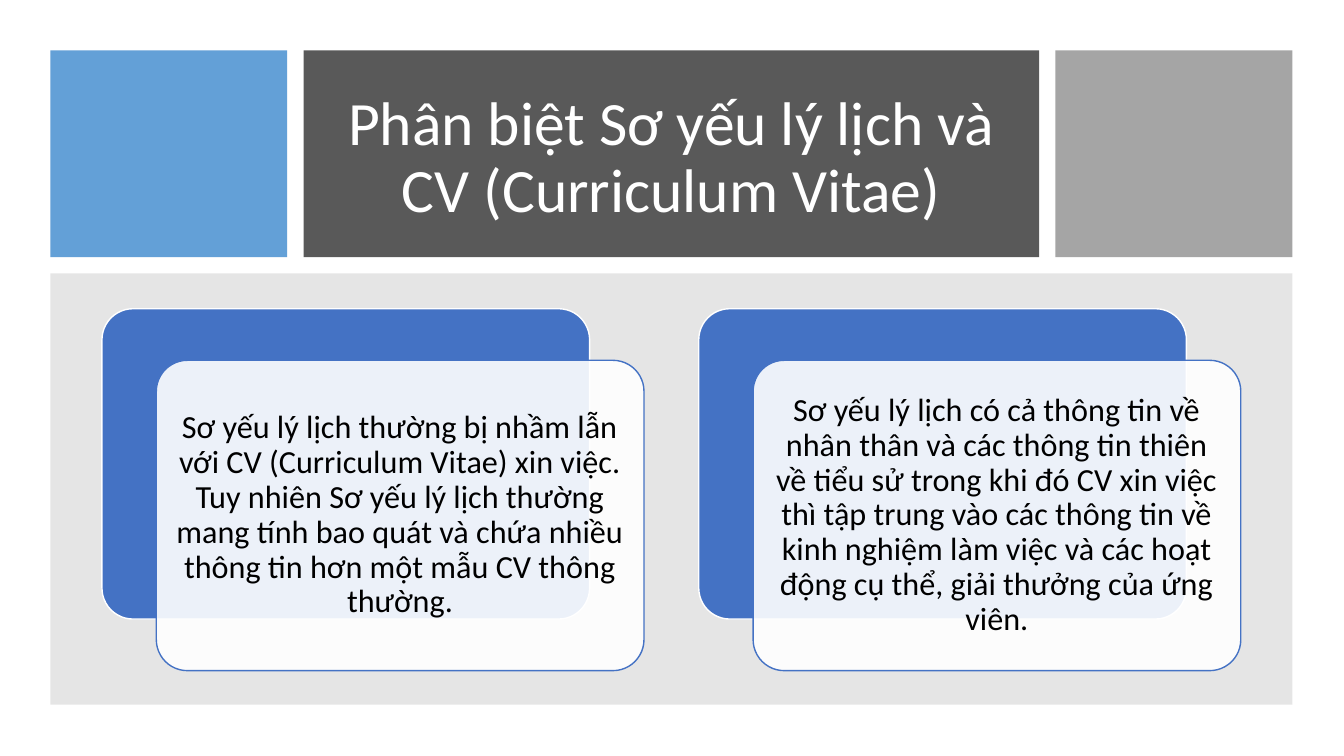
from dataclasses import dataclass

from lxml.etree import SubElement
from pptx import Presentation
from pptx.dml.color import RGBColor
from pptx.enum.shapes import MSO_SHAPE as Preset
from pptx.enum.text import MSO_ANCHOR as Anchor, PP_ALIGN as Align
from pptx.oxml.ns import qn
from pptx.util import Cm, Pt


@dataclass(frozen=True)
class Theme:
    font: str = "Calibri"
    title_size: int = 44
    body_size: int = 23
    line_spacing: float = 0.9
    outline: int = 1
    white: str = "FFFFFF"
    black: str = "000000"
    left_block: str = "5B9BD5"
    title_block: str = "595959"
    right_block: str = "A5A5A5"
    panel: str = "808080"
    card: str = "4472C4"


@dataclass(frozen=True)
class Box:
    """A rectangle measured in centimetres."""
    left: float
    top: float
    width: float
    height: float

    def lengths(self):
        return Cm(self.left), Cm(self.top), Cm(self.width), Cm(self.height)


THEME = Theme()
MARGIN = 1.27
GAP = 0.41
HEADER = Box(MARGIN, MARGIN, 31.3, 5.21)
PANEL = Box(MARGIN, HEADER.top + HEADER.height + GAP, HEADER.width, 10.87)

TITLE = "Phân biệt Sơ yếu lý lịch và CV (Curriculum Vitae)"
CARD_TEXTS = [
    "Sơ yếu lý lịch thường bị nhầm lẫn với CV (Curriculum Vitae) xin việc. "
    "Tuy nhiên Sơ yếu lý lịch thường mang tính bao quát và chứa nhiều thông "
    "tin hơn một mẫu CV thông thường.",
    "Sơ yếu lý lịch có cả thông tin về nhân thân và các thông tin thiên về "
    "tiểu sử trong khi đó CV xin việc thì tập trung vào các thông tin về kinh "
    "nghiệm làm việc và các hoạt động cụ thể, giải thưởng của ứng viên.",
]


def add_block(slide, preset, box, color, opacity=100, outline=None):
    shape = slide.shapes.add_shape(preset, *box.lengths())
    shape.shadow.inherit = False
    shape.fill.solid()
    shape.fill.fore_color.rgb = RGBColor.from_string(color)
    if opacity < 100:
        fill_color = shape.fill._xPr.find(qn("a:solidFill"))[0]
        SubElement(fill_color, qn("a:alpha"), val=str(opacity * 1000))
    if outline:
        shape.line.color.rgb = RGBColor.from_string(outline)
        shape.line.width = Pt(THEME.outline)
    else:
        shape.line.fill.background()
    return shape


def write_centred(shape, text, size, color):
    frame = shape.text_frame
    frame.word_wrap = True
    frame.vertical_anchor = Anchor.MIDDLE
    frame.margin_left = frame.margin_right = Cm(0.25)
    frame.margin_top = frame.margin_bottom = Cm(0.25)
    paragraph = frame.paragraphs[0]
    paragraph.alignment = Align.CENTER
    paragraph.line_spacing = THEME.line_spacing
    run = paragraph.add_run()
    run.text = text
    run.font.name = THEME.font
    run.font.size = Pt(size)
    run.font.color.rgb = RGBColor.from_string(color)


def add_header(slide, box, title):
    """Place the title block between two coloured side blocks."""
    side = 5.97
    middle = box.width - 2 * (side + GAP)
    left = box.left
    for width, color, opacity in [(side, THEME.left_block, 95),
                                  (middle, THEME.title_block, 100),
                                  (side, THEME.right_block, 100)]:
        block = Box(left, box.top, width, box.height)
        add_block(slide, Preset.RECTANGLE, block, color, opacity)
        left += width + GAP
    title_box = Box(box.left + 7.19, box.top + 0.76, 16.92, 3.96)
    title_shape = slide.shapes.add_textbox(*title_box.lengths())
    write_centred(title_shape, title, THEME.title_size, THEME.white)


def add_card(slide, box, text):
    """Place a coloured card with a translucent text card shifted over it."""
    front_box = Box(box.left + 1.37, box.top + 1.3, box.width, box.height)
    back = add_block(slide, Preset.ROUNDED_RECTANGLE, box, THEME.card,
                     outline=THEME.white)
    front = add_block(slide, Preset.ROUNDED_RECTANGLE, front_box, THEME.white,
                      opacity=90, outline=THEME.card)
    for shape in (back, front):
        shape.adjustments[0] = 0.1
    write_centred(front, text, THEME.body_size, THEME.black)


def add_card_panel(slide, box, texts):
    add_block(slide, Preset.RECTANGLE, box, THEME.panel, opacity=20)
    pitch = 15.04
    for index, text in enumerate(texts):
        card = Box(box.left + 1.3 + index * pitch, box.top + 0.89, 12.29, 7.82)
        add_card(slide, card, text)


def main():
    presentation = Presentation()
    presentation.slide_width = Cm(33.87)
    presentation.slide_height = Cm(19.05)
    slide = presentation.slides.add_slide(presentation.slide_layouts[6])
    add_header(slide, HEADER, TITLE)
    add_card_panel(slide, PANEL, CARD_TEXTS)
    presentation.save("out.pptx")


if __name__ == "__main__":
    main()
